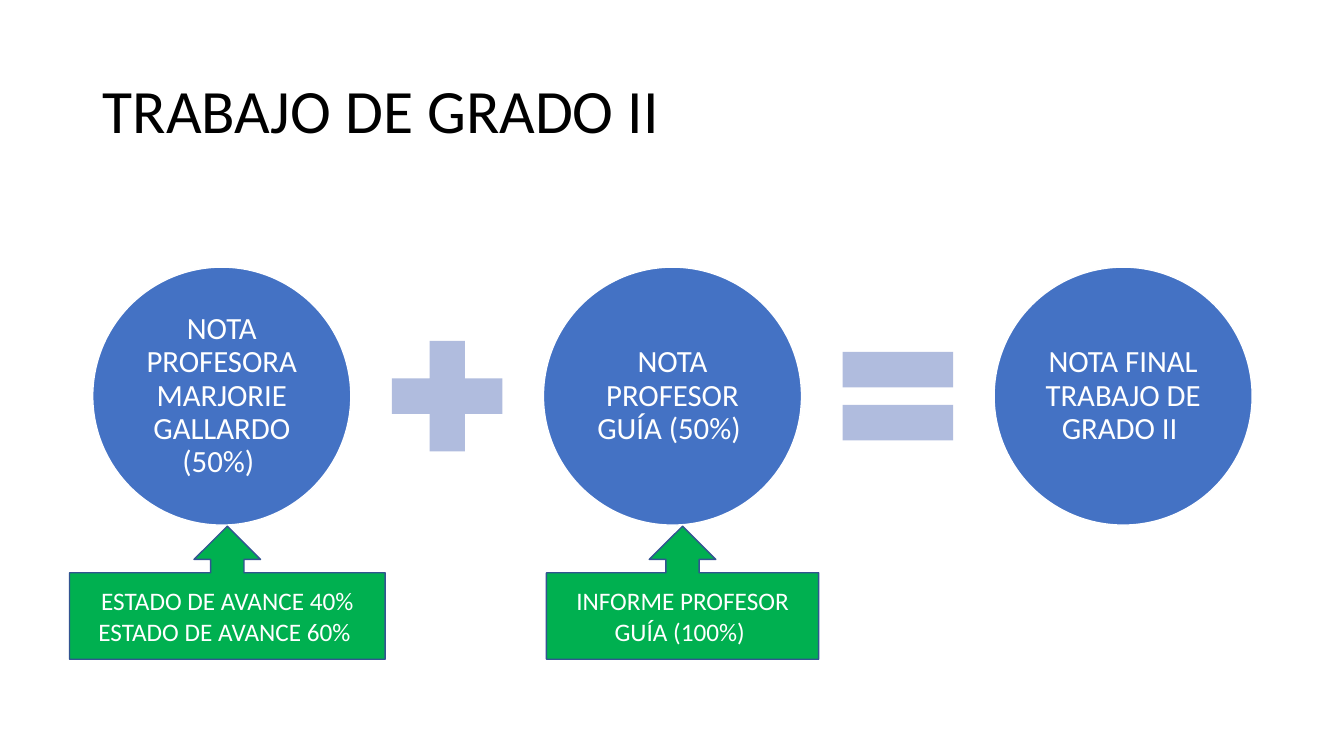
from pptx import Presentation
from pptx.dml.color import RGBColor
from pptx.enum.shapes import MSO_SHAPE
from pptx.enum.text import MSO_ANCHOR, PP_ALIGN
from pptx.util import Inches, Pt

TITLE = "TRABAJO DE GRADO II"
GRADES = [
    "NOTA PROFESORA MARJORIE GALLARDO (50%) ",
    "NOTA PROFESOR GUÍA (50%) ",
    "NOTA FINAL TRABAJO DE GRADO II ",
]
OPERATORS = [MSO_SHAPE.MATH_PLUS, MSO_SHAPE.MATH_EQUAL]
CALLOUTS = [
    (0.69, 3.13, "ESTADO DE AVANCE 40%\nESTADO DE AVANCE 60% "),
    (5.42, 2.7, "INFORME PROFESOR GUÍA (100%) "),
]

BLACK = RGBColor(0x00, 0x00, 0x00)
WHITE = RGBColor(0xFF, 0xFF, 0xFF)
BLUE = RGBColor(0x44, 0x72, 0xC4)
PALE_BLUE = RGBColor(0xB0, 0xBC, 0xDE)
GREEN = RGBColor(0x00, 0xB0, 0x50)
NAVY = RGBColor(0x32, 0x54, 0x91)

FONT = "Calibri"
LEFT, CIRCLE_TOP, CIRCLE_SIZE = 0.92, 2.65, 2.56
OPERATOR_SIZE, GAP = 1.49, 0.21
STEP = CIRCLE_SIZE + OPERATOR_SIZE + 2 * GAP
OPERATOR_TOP = CIRCLE_TOP + (CIRCLE_SIZE - OPERATOR_SIZE) / 2
CALLOUT_TOP, CALLOUT_HEIGHT = 5.22, 1.32


def write(box, text, size, color, align, spacing=1.0):
    frame = box.text_frame
    frame.word_wrap = True
    frame.vertical_anchor = MSO_ANCHOR.MIDDLE
    frame.text = text
    for para in frame.paragraphs:
        para.alignment = align
        para.line_spacing = spacing
        for span in para.runs:
            span.font.name = FONT
            span.font.size = Pt(size)
            span.font.color.rgb = color


def add_filled(page, kind, left, top, width, height, fill, line=None):
    shape = page.shapes.add_shape(
        kind, Inches(left), Inches(top), Inches(width), Inches(height))
    shape.shadow.inherit = False
    shape.fill.solid()
    shape.fill.fore_color.rgb = fill
    if line is None:
        shape.line.fill.background()
    else:
        shape.line.color.rgb = line
        shape.line.width = Pt(1)
    return shape


def main():
    deck = Presentation()
    deck.slide_width, deck.slide_height = Inches(13.33), Inches(7.5)
    page = deck.slides.add_slide(deck.slide_layouts[6])

    title = page.shapes.add_textbox(
        Inches(LEFT), Inches(0.4), Inches(11.5), Inches(1.45))
    write(title, TITLE, 44, BLACK, PP_ALIGN.LEFT, 0.9)

    for index, grade in enumerate(GRADES):
        circle = add_filled(page, MSO_SHAPE.OVAL, LEFT + index * STEP, CIRCLE_TOP,
                            CIRCLE_SIZE, CIRCLE_SIZE, BLUE, WHITE)
        frame = circle.text_frame
        frame.margin_left = frame.margin_right = Inches(0.03)
        frame.margin_top = frame.margin_bottom = Inches(0.03)
        write(circle, grade, 22, WHITE, PP_ALIGN.CENTER, 0.9)

    for index, kind in enumerate(OPERATORS):
        left = LEFT + CIRCLE_SIZE + GAP + index * STEP
        add_filled(page, kind, left, OPERATOR_TOP,
                   OPERATOR_SIZE, OPERATOR_SIZE, PALE_BLUE)

    for left, width, text in CALLOUTS:
        callout = add_filled(page, MSO_SHAPE.UP_ARROW_CALLOUT, left, CALLOUT_TOP,
                             width, CALLOUT_HEIGHT, GREEN, NAVY)
        write(callout, text, 18, WHITE, PP_ALIGN.CENTER)

    deck.save("out.pptx")


if __name__ == "__main__":
    main()
